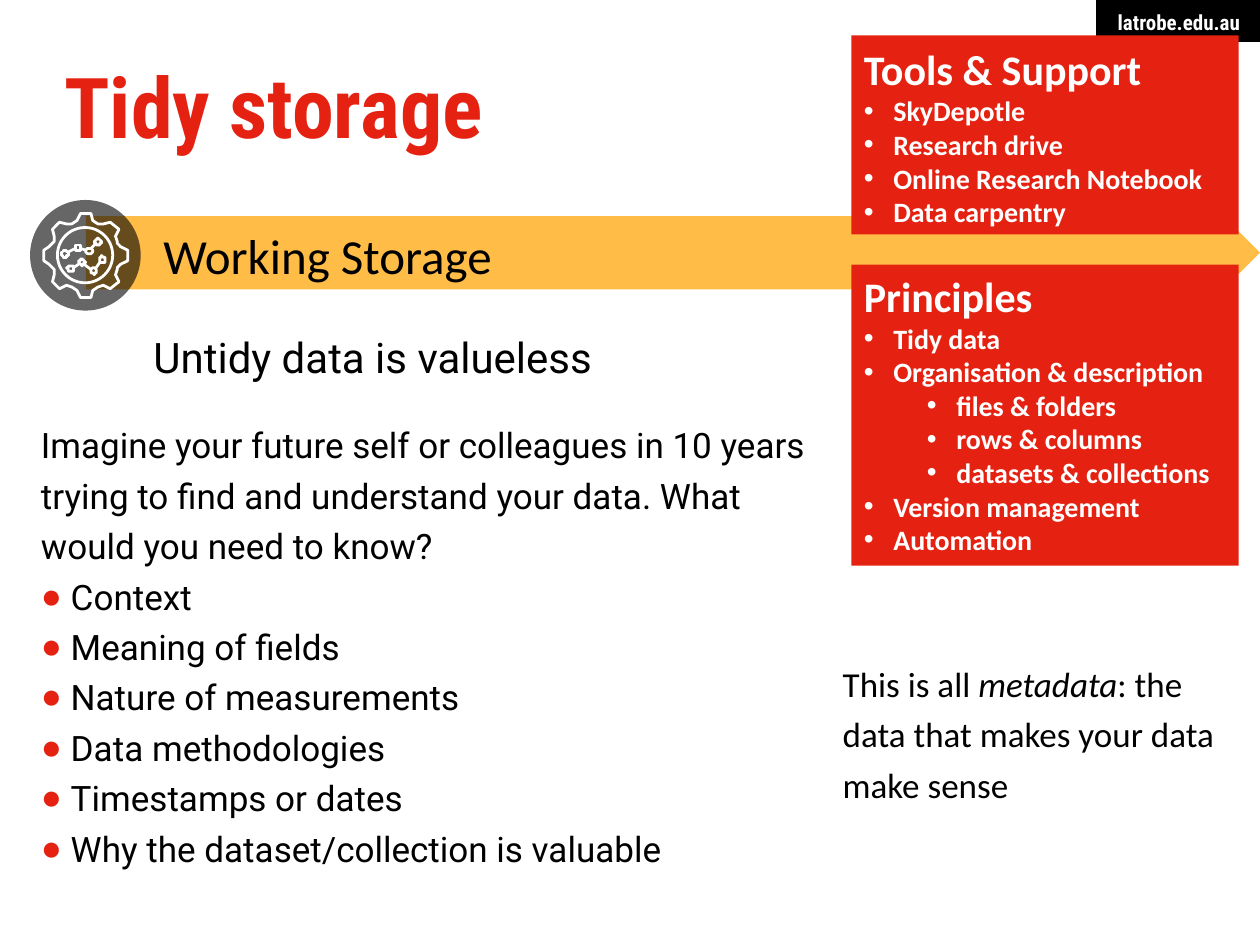
import math
from dataclasses import dataclass
from typing import Optional

import pptx
import pptx.dml.color
import pptx.enum.shapes
import pptx.enum.text
import pptx.oxml.ns
import pptx.util
from lxml import etree

Pt = pptx.util.Pt
SHAPE = pptx.enum.shapes.MSO_SHAPE
ANCHOR = pptx.enum.text.MSO_ANCHOR
ALIGN = pptx.enum.text.PP_ALIGN
AUTOSIZE = pptx.enum.text.MSO_AUTO_SIZE
qn = pptx.oxml.ns.qn

COLOURS = {"red": "E52212", "amber": "FFBD47", "black": "000000", "white": "FFFFFF"}
ICON_X, ICON_Y = 48.6, 145.8  # centre of the gear icon
ICON_LINE = 1.6


@dataclass
class Box:
    left: float
    top: float
    width: float
    height: float

    def lengths(self) -> list:
        return [Pt(v) for v in (self.left, self.top, self.width, self.height)]


@dataclass
class Style:
    font: str
    size: float
    colour: str = "black"
    bold: Optional[bool] = None


@dataclass
class Card:
    box: Box
    heading: str
    items: list  # (level, wording)
    anchor: ANCHOR


CARDS = [
    Card(Box(486.5, 151.2, 221.3, 172), "Principles",
         [(0, "Tidy data"), (0, "Organisation & description"), (1, "files & folders"),
          (1, "rows & columns"), (1, "datasets & collections"),
          (0, "Version management"), (0, "Automation")], ANCHOR.TOP),
    Card(Box(486.5, 20.2, 221.3, 113.8), "Tools & Support",
         [(0, "SkyDepotle"), (0, "Research drive"), (0, "Online Research Notebook"),
          (0, "Data carpentry")], ANCHOR.BOTTOM),
]
INTRO = ("Imagine your future self or colleagues in 10 years trying to find and "
         "understand your data. What would you need to know?")
QUESTIONS = ["Context", "Meaning of fields", "Nature of measurements", "Data methodologies",
             "Timestamps or dates", "Why the dataset/collection is valuable"]
# Nodes of the two sparklines, relative to the icon centre
SPARKLINES = [[(-8.3, 7.6), (-1.8, 4), (4.9, 9), (9.9, 2.5)],
              [(-11.5, -0.8), (-4.3, -4.2), (2.4, -2.4), (7.4, -7.6)]]
NODE_RADIUS = 1.8


def rgb(name: str) -> pptx.dml.color.RGBColor:
    return pptx.dml.color.RGBColor.from_string(COLOURS[name])


def style(font, look: Style) -> None:
    font.name, font.size, font.bold = look.font, Pt(look.size), look.bold
    font.color.rgb = rgb(look.colour)


def bullet(paragraph, char: Optional[str], margin: float, hang: float,
           colour: Optional[str] = None) -> None:
    props = paragraph._p.get_or_add_pPr()
    props.set("marL", str(Pt(margin)))
    props.set("indent", str(Pt(-hang)))
    if char is None:
        etree.SubElement(props, qn("a:buNone"))
        return
    if colour:
        fill = etree.SubElement(props, qn("a:buClr"))
        etree.SubElement(fill, qn("a:srgbClr"), val=COLOURS[colour])
    etree.SubElement(props, qn("a:buFont"), typeface="Arial")
    etree.SubElement(props, qn("a:buChar"), char=char)


def paint(shape, fill: Optional[str], line: Optional[str] = None):
    shape.shadow.inherit = False
    if fill:
        shape.fill.solid()
        shape.fill.fore_color.rgb = rgb(fill)
    else:
        shape.fill.background()
    if line:
        shape.line.color.rgb = rgb(line)
        shape.line.width = Pt(ICON_LINE)
    else:
        shape.line.fill.background()
    return shape


def set_margins(frame, left: float, top: float, right: float, bottom: float) -> None:
    frame.margin_left, frame.margin_top = Pt(left), Pt(top)
    frame.margin_right, frame.margin_bottom = Pt(right), Pt(bottom)


def add_text(slide, box: Box, wording: str, look: Style):
    frame = slide.shapes.add_textbox(*box.lengths()).text_frame
    frame.word_wrap = True
    frame.text = wording
    style(frame.paragraphs[0].font, look)
    return frame


def circle(x: float, y: float, radius: float, steps: int = 16) -> list:
    turns = [2 * math.pi * step / steps for step in range(steps)]
    return [(x + radius * math.cos(t), y + radius * math.sin(t)) for t in turns]


def link(start: tuple, end: tuple) -> list:
    """The stretch between two nodes, from rim to rim."""
    (x1, y1), (x2, y2) = start, end
    part = NODE_RADIUS / math.dist(start, end)
    dx, dy = (x2 - x1) * part, (y2 - y1) * part
    return [(x1 + dx, y1 + dy), (x2 - dx, y2 - dy)]


def draw_outline(slide, contours: list) -> None:
    """Draw point lists as one white outline; those longer than a stretch are closed."""
    builder = slide.shapes.build_freeform(*contours[0][0], scale=Pt(1) / 100 * 100)
    for number, points in enumerate(contours):
        if number:
            builder.move_to(*points[0])
        builder.add_line_segments(points[1:], close=len(points) > 2)
    paint(builder.convert_to_shape(), None, "white")


def draw_icon(slide) -> None:
    disc = paint(slide.shapes.add_shape(SHAPE.OVAL, *Box(17.2, 114.3, 63.2, 63.2).lengths()), "black")
    tint = disc._element.spPr.find(".//" + qn("a:srgbClr"))
    etree.SubElement(tint, qn("a:alpha"), val="60000")

    # Gear: one tooth turned eight times
    tooth = [(-7.2, 18.3), (-4.8, 20.2), (-3, 24), (3, 24), (4.8, 20.2), (7.2, 18.3)]
    rim = []
    for turn in range(8):
        c, s = math.cos(turn * math.pi / 4), math.sin(turn * math.pi / 4)
        rim += [(ICON_X + x * c + y * s, ICON_Y + x * s - y * c) for x, y in tooth]
    draw_outline(slide, [rim])
    ring = Box(ICON_X - 15.8, ICON_Y - 15.8, 31.6, 31.6)
    paint(slide.shapes.add_shape(SHAPE.OVAL, *ring.lengths()), None, "white")

    for offsets in SPARKLINES:
        nodes = [(ICON_X + x, ICON_Y + y) for x, y in offsets]
        rims = [circle(x, y, NODE_RADIUS) for x, y in nodes]
        draw_outline(slide, rims + [link(*pair) for pair in zip(nodes, nodes[1:])])


def draw_card(slide, card: Card) -> None:
    shape = paint(slide.shapes.add_shape(SHAPE.RECTANGLE, *card.box.lengths()), "red")
    frame = shape.text_frame
    frame.word_wrap, frame.vertical_anchor = True, card.anchor
    heading = frame.paragraphs[0]
    heading.text, heading.alignment = card.heading, ALIGN.LEFT
    style(heading.font, Style("Calibri", 24, "white", True))
    for level, wording in card.items:
        item = frame.add_paragraph()
        item.text, item.level, item.alignment = wording, level, ALIGN.LEFT
        bullet(item, "•", 16.9 + 36 * level, 16.9)
        style(item.font, Style("Calibri", 16, "white", True))


def place(placeholder, box: Box):
    placeholder.left, placeholder.top, placeholder.width, placeholder.height = box.lengths()
    frame = placeholder.text_frame
    set_margins(frame, 0, 0, 0, 0)
    frame.word_wrap, frame.auto_size, frame.vertical_anchor = True, AUTOSIZE.NONE, ANCHOR.TOP
    return frame


def main() -> None:
    deck = pptx.Presentation()
    deck.slide_width, deck.slide_height = Pt(720), Pt(540)
    slide = deck.slides.add_slide(deck.slide_layouts[1])

    # Title
    frame = place(slide.shapes.title, Box(36.7, 33.8, 646.5, 66.2))
    frame.text = "Tidy storage"
    title = frame.paragraphs[0]
    title.alignment, title.line_spacing = ALIGN.LEFT, Pt(55)
    style(title.font, Style("Roboto Condensed", 48, "red", True))

    # Question list
    frame = place(slide.placeholders[1], Box(23.4, 237.4, 450.7, 291.6))
    for number, wording in enumerate([INTRO] + QUESTIONS):
        line = frame.add_paragraph() if number else frame.paragraphs[0]
        line.text = wording
        if number:
            bullet(line, "●", 17, 17, "red")
        else:
            bullet(line, None, 0, 0)
        line.line_spacing, line.space_before = 1.2, Pt(0)
        style(line.font, Style("Roboto", 20))

    # Web address tag
    tag = paint(slide.shapes.add_shape(SHAPE.RECTANGLE, *Box(626.4, 0, 93.6, 24).lengths()), "black")
    set_margins(tag.text_frame, 11.5, 5.4, 11.3, 3.8)
    tag.text_frame.word_wrap = False
    address = tag.text_frame.paragraphs[0]
    address.text, address.alignment = "latrobe.edu.au", ALIGN.RIGHT
    style(address.font, Style("Roboto Condensed", 12, "white", True))

    # Stage arrow with its icon
    arrow = slide.shapes.add_shape(SHAPE.RIGHT_ARROW, *Box(49, 123.5, 671, 41.8).lengths())
    arrow.adjustments[0], arrow.adjustments[1] = 1, 0.5
    paint(arrow, "amber")
    stage = add_text(slide, Box(82, 129, 210.2, 34), "Working Storage", Style("Calibri", 28))
    set_margins(stage, 0, 0, 0, 0)
    stage.paragraphs[0].alignment = ALIGN.CENTER
    draw_icon(slide)

    # Red cards
    for card in CARDS:
        draw_card(slide, card)

    # Remarks
    add_text(slide, Box(80.6, 185.8, 301.7, 36), "Untidy data is valueless", Style("Roboto", 24))
    remark = add_text(slide, Box(474.5, 370.2, 235.4, 93), "This is all ", Style("Calibri", 20))
    metadata = remark.paragraphs[0]
    metadata.line_spacing = 1.2
    metadata.add_run().text = "metadata"
    metadata.runs[1].font.italic = True
    metadata.add_run().text = ": the data that makes your data make sense"

    deck.save("out.pptx")


if __name__ == "__main__":
    main()
